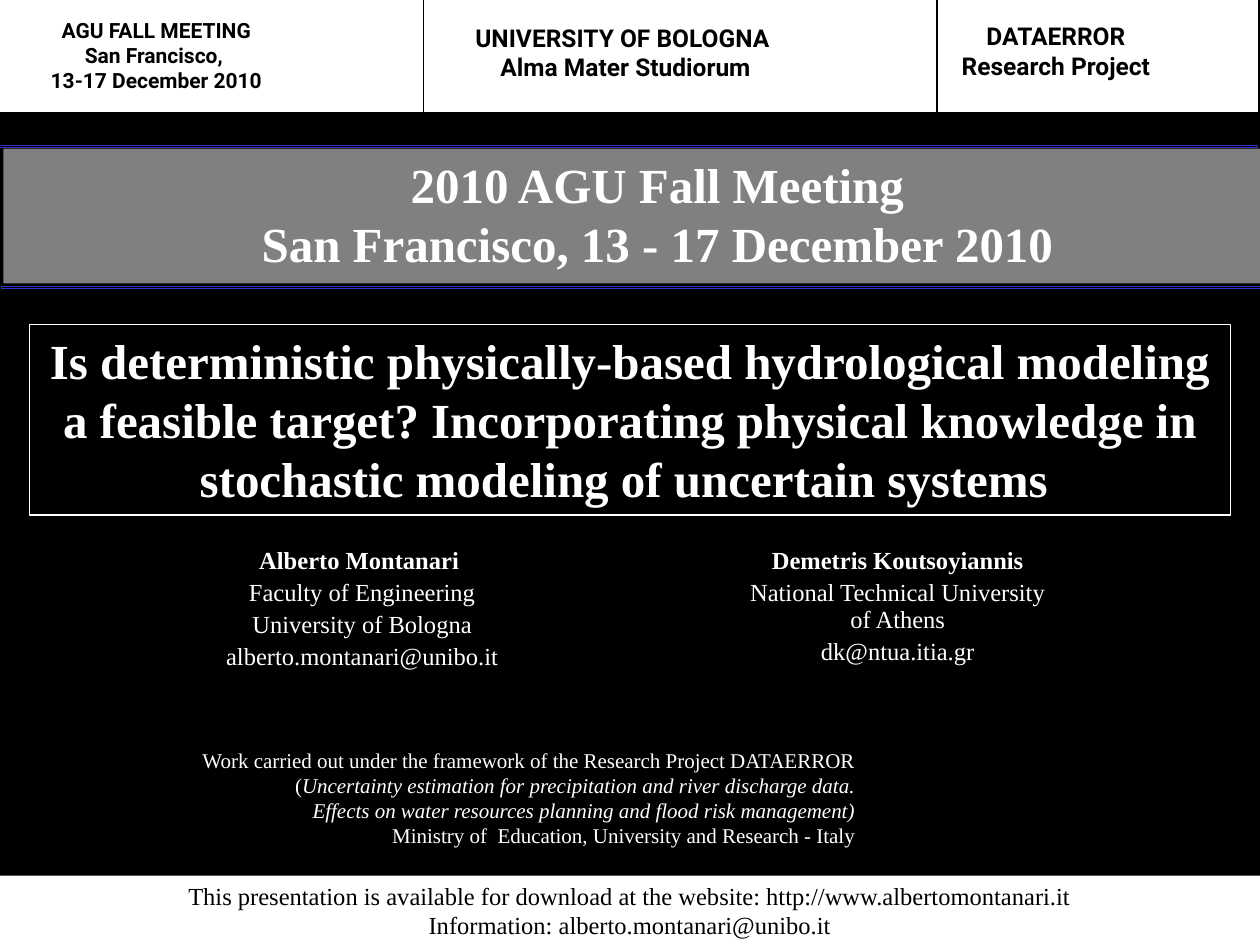
from copy import deepcopy

from lxml import etree
from pptx import Presentation
from pptx.dml.color import RGBColor
from pptx.enum.shapes import MSO_CONNECTOR as Connector, MSO_SHAPE as Shape
from pptx.enum.text import MSO_ANCHOR as Anchor, PP_ALIGN as Align
from pptx.oxml.ns import qn
from pptx.util import Pt

BLACK = RGBColor(0x00, 0x00, 0x00)
WHITE = RGBColor(0xFF, 0xFF, 0xFF)
BLUE = RGBColor(0x33, 0x33, 0xCC)
SERIF, SANS = "Times New Roman", "Roboto"
WIDTH, HEIGHT = 720, 540


def write(frame, paragraphs, size=14, font=SERIF, color=WHITE, bold=False,
          align=Align.CENTER, leading=1.2, before=0):
    """Each paragraph is a string or a list of (text, overrides) spans."""
    frame.word_wrap = True
    for index, content in enumerate(paragraphs):
        para = frame.paragraphs[0] if index == 0 else frame.add_paragraph()
        para.alignment = align
        para.line_spacing = Pt(size * leading)
        para.space_before = Pt(before if index else 0)
        spans = [(content, {})] if isinstance(content, str) else content
        for text, overrides in spans:
            for number, line in enumerate(text.split("\n")):
                if number:
                    para.add_line_break()
                span = para.add_run()
                span.text = line
                span.font.name, span.font.size = font, Pt(size)
                span.font.color.rgb = color
                span.font.bold = overrides.get("bold", bold)
                span.font.italic = overrides.get("italic", False)
        # Line breaks take the format of the text around them
        for line_break in para._p.findall(qn("a:br")):
            line_break.append(deepcopy(span._r.rPr))


def add_text(page, box, paragraphs, **style):
    text_box = page.shapes.add_textbox(*map(Pt, box))
    write(text_box.text_frame, paragraphs, **style)


def add_box(page, box, fill=None, opacity=100, line=None, weight=0.25):
    shape = page.shapes.add_shape(Shape.RECTANGLE, *map(Pt, box))
    shape.shadow.inherit = False
    if fill is None:
        shape.fill.background()
    else:
        shape.fill.solid()
        shape.fill.fore_color.rgb = fill
        if opacity < 100:
            tint = shape._element.spPr.find(qn("a:solidFill"))[0]
            etree.SubElement(tint, qn("a:alpha"), val=str(opacity * 1000))
    if line is None:
        shape.line.fill.background()
    else:
        shape.line.color.rgb = line
        shape.line.width = Pt(weight)
    shape.text_frame.vertical_anchor = Anchor.TOP
    return shape


def add_rule(page, start, end, weight):
    rule = page.shapes.add_connector(Connector.STRAIGHT, *map(Pt, start + end))
    rule.line.color.rgb = BLACK
    rule.line.width = Pt(weight)
    etree.SubElement(rule._element.spPr, qn("a:effectLst"))


def header(page, left, top, width, height):
    bottom = top + height
    add_box(page, (left, top, width, height), WHITE, line=BLACK)
    add_rule(page, (0, bottom), (WIDTH, bottom), 1.25)
    for x in (242, 535.5):
        add_rule(page, (x, 0), (x, bottom), 0.75)
    # Event, university and project
    for x, y, box_width, size, lines in (
        (3, 6.5, 172.8, 12, ["AGU FALL MEETING\nSan Francisco, ", "13-17 December 2010"]),
        (252.75, 9.35, 209.5, 14, ["UNIVERSITY OF BOLOGNA ", "Alma Mater Studiorum"]),
        (518.4, 8.65, 170, 14, ["DATAERROR", "Research Project"]),
    ):
        add_text(page, (x, y, box_width, bottom - y), lines, size=size,
                 font=SANS, color=BLACK, bold=True)


def footer(page, left, top, width, height):
    add_rule(page, (left, top + 2), (left + width, top + 2), 1.25)
    frame = add_box(page, (left, top, width, height), WHITE).text_frame
    frame.margin_left = frame.margin_right = Pt(2.9)
    frame.margin_top = frame.margin_bottom = Pt(2.9)
    write(frame, ["This presentation is available for download at the website: "
                  "http://www.albertomontanari.it",
                  "Information: alberto.montanari@unibo.it"], color=BLACK)


def meeting_banner(page, left, top, width, height):
    add_box(page, (left, top, width, height), WHITE, opacity=50)
    add_text(page, (-14.4, top, 780, height),
             ["2010 AGU Fall Meeting", "San Francisco, 13 - 17 December 2010"],
             size=28, bold=True)
    # Thin bars below and above the banner
    for x, y in ((0.7, top + height + 1.4), (-0.7, top - 2.2)):
        add_box(page, (x, y, WIDTH - 0.7, 1.4), BLACK, opacity=50, line=BLUE)


def talk_title(page, *box):
    frame = add_box(page, box, line=WHITE, weight=0.75).text_frame
    write(frame, ["Is deterministic physically-based hydrological modeling a feasible "
                  "target? Incorporating physical knowledge in stochastic modeling "
                  "of uncertain systems "], size=28, bold=True)


def authors(page, *box):
    people = (
        ("Alberto Montanari ", "Faculty of Engineering", "University of Bologna",
         "alberto.montanari@unibo.it"),
        ("Demetris Koutsoyiannis", "National Technical University\nof Athens",
         "dk@ntua.itia.gr"),
    )
    table = page.shapes.add_table(1, len(people), *map(Pt, box)).table
    table.first_row = table.horz_banding = False
    for cell, (name, *details) in zip(table.rows[0].cells, people):
        write(cell.text_frame, [[(name, {"bold": True})], *details],
              leading=1.1, before=2.8)
        properties = cell._tc.get_or_add_tcPr()
        for side in ("lnL", "lnR", "lnT", "lnB"):
            border = etree.SubElement(properties, qn(f"a:{side}"), w=str(Pt(2.25)))
            fill = etree.SubElement(border, qn("a:solidFill"))
            etree.SubElement(fill, qn("a:srgbClr"), val=str(BLACK))
        cell.fill.background()


def funding_note(page, *box):
    add_text(page, box, [
        "Work carried out under the framework of the Research Project DATAERROR",
        [("(", {}),
         ("Uncertainty estimation for precipitation and river discharge data.\n"
          "Effects on water resources planning and flood risk management)",
          {"italic": True})],
        "Ministry of  Education, University and Research - Italy",
    ], size=12, align=Align.RIGHT)


def main():
    deck = Presentation()
    deck.slide_width, deck.slide_height = Pt(WIDTH), Pt(HEIGHT)
    page = deck.slides.add_slide(deck.slide_layouts[6])
    page.background.fill.solid()
    page.background.fill.fore_color.rgb = BLACK

    header(page, -0.7, -0.7, WIDTH, 65.5)
    footer(page, 0, 500.4, WIDTH, 39.6)
    meeting_banner(page, 2, 85, WIDTH, 77)
    talk_title(page, 16.8, 185.5, 686.2, 108.8)
    authors(page, 54, 309.6, 612, 110.9)
    funding_note(page, 78.5, 423.4, 417.6, 90.7)
    deck.save("out.pptx")


if __name__ == "__main__":
    main()
